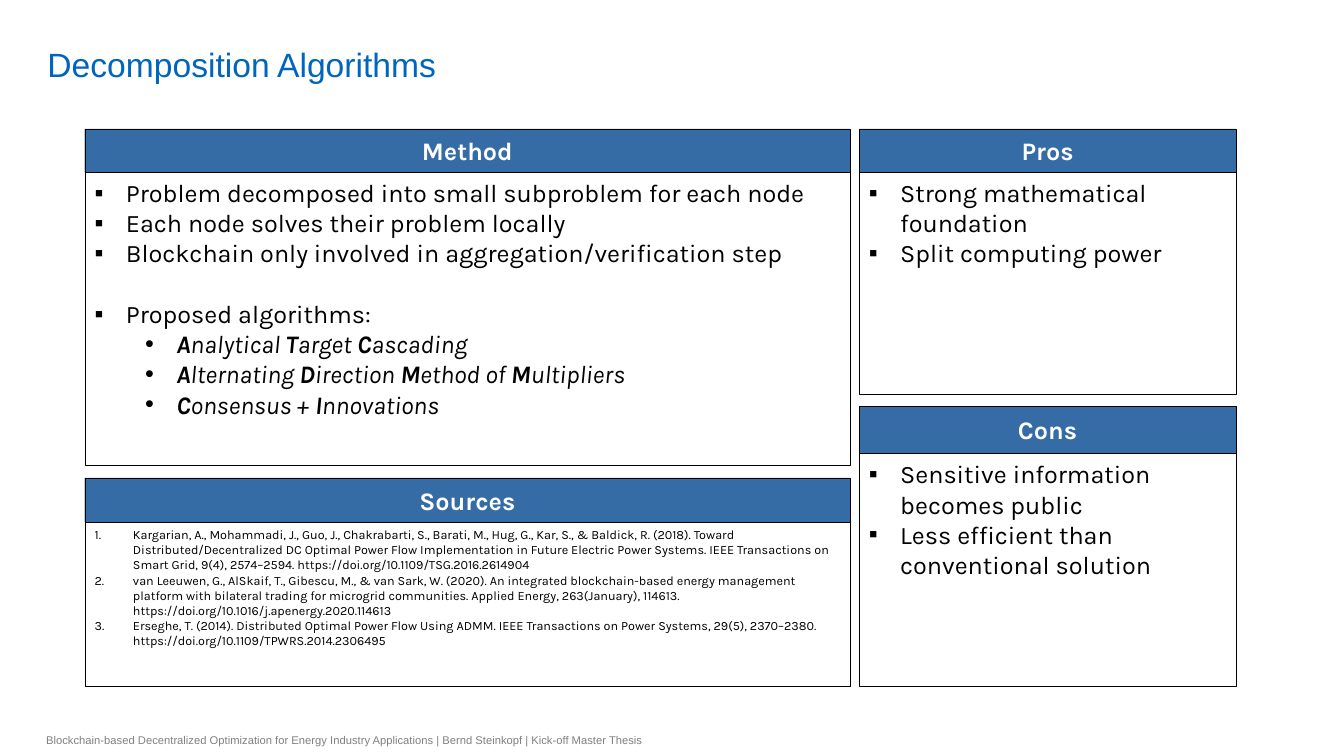
from itertools import groupby

from lxml import etree
from pptx import Presentation
from pptx.dml.color import RGBColor
from pptx.enum.shapes import MSO_SHAPE
from pptx.enum.text import MSO_ANCHOR, MSO_AUTO_SIZE, PP_ALIGN
from pptx.oxml.ns import qn
from pptx.util import Inches, Pt

RECT = MSO_SHAPE.RECTANGLE
TOP, MIDDLE, BOTTOM = MSO_ANCHOR.TOP, MSO_ANCHOR.MIDDLE, MSO_ANCHOR.BOTTOM
LEFT, CENTER = PP_ALIGN.LEFT, PP_ALIGN.CENTER
SQUARE, DOT, NUMBER = "▪", "•", "arabicPeriod"

# Grid in inches: (left, width) of each column, then the panels in it
WIDE, SLIM = (0.84, 7.59), (8.52, 3.74)
HEAD, BODY, SMALL = 18, 18, 9
GAP = 21.6  # one text line, in points

# Panel: column, top, head height, bottom, title, text size, items
# Item: mark, level, text
PANELS = [
    (SLIM, 1.28, 0.43, 3.91, "Pros", BODY, [
        (SQUARE, 0, "Strong mathematical foundation"),
        (SQUARE, 0, "Split computing power"),
    ]),
    (SLIM, 4.03, 0.47, 6.81, "Cons", BODY, [
        (SQUARE, 0, "Sensitive information becomes public"),
        (SQUARE, 0, "Less efficient than conventional solution"),
    ]),
    (WIDE, 4.74, 0.44, 6.81, "Sources", SMALL, [
        (NUMBER, 0, "Kargarian, A., Mohammadi, J., Guo, J., Chakrabarti, S., "
         "Barati, M., Hug, G., Kar, S., & Baldick, R. (2018). Toward "
         "Distributed/Decentralized DC Optimal Power Flow Implementation in "
         "Future Electric Power Systems. IEEE Transactions on Smart Grid, "
         "9(4), 2574–2594. https://doi.org/10.1109/TSG.2016.2614904"),
        (NUMBER, 0, "van Leeuwen, G., AlSkaif, T., Gibescu, M., & van Sark, W. "
         "(2020). An integrated blockchain-based energy management platform "
         "with bilateral trading for microgrid communities. Applied Energy, "
         "263(January), 114613. https://doi.org/10.1016/j.apenergy.2020.114613"),
        (NUMBER, 0, "Erseghe, T. (2014). Distributed Optimal Power Flow Using "
         "ADMM. IEEE Transactions on Power Systems, 29(5), 2370–2380. "
         "https://doi.org/10.1109/TPWRS.2014.2306495"),
    ]),
    (WIDE, 1.28, 0.43, 4.62, "Method", BODY, [
        (SQUARE, 0, "Problem decomposed into small subproblem for each node"),
        (SQUARE, 0, "Each node solves their problem locally"),
        (SQUARE, 0, "Blockchain only involved in aggregation/verification step"),
        (SQUARE, 0, "Proposed algorithms:"),
        (DOT, 1, "Analytical Target Cascading"),
        (DOT, 1, "Alternating Direction Method of Multipliers"),
        (DOT, 1, "Consensus + Innovations"),
    ]),
]


def color(code):
    return RGBColor.from_string(code)


def add_run(para, text, size, code, face="Karla", bold=False, slant=False):
    run = para.add_run()
    run.text = text
    font = run.font
    font.name, font.size, font.bold, font.italic = face, Pt(size), bold, slant
    font.color.rgb = color(code)


deck = Presentation()
deck.slide_width, deck.slide_height = Inches(13.33), Inches(7.5)
slide = deck.slides.add_slide(deck.slide_layouts[5])
shapes = slide.shapes

# Title
title = shapes.title
title.left, title.top = Inches(0.37), Inches(0.05)
title.width, title.height = Inches(11.58), Inches(0.79)
frame = title.text_frame
frame.auto_size = MSO_AUTO_SIZE.NONE
frame.vertical_anchor = BOTTOM
frame.margin_top = frame.margin_bottom = 0
frame.paragraphs[0].alignment = LEFT
add_run(frame.paragraphs[0], "Decomposition Algorithms", 24, "0065BD", "Arial")

# Panels: a head bar over a list box
for (left, width), top, head, bottom, name, size, items in PANELS:
    split = top + head
    frames = []
    for start, end, fill, anchor in [(top, split, "356CA5", MIDDLE),
                                     (split, bottom, "FFFFFF", TOP)]:
        box = shapes.add_shape(RECT, Inches(left), Inches(start),
                               Inches(width), Inches(end - start))
        box.shadow.inherit = False
        box.fill.solid()
        box.fill.fore_color.rgb = color(fill)
        box.line.color.rgb = color("000000")
        box.line.width = Pt(0.25)
        box.text_frame.word_wrap = True
        box.text_frame.vertical_anchor = anchor
        frames.append(box.text_frame)
    bar, body = frames
    bar.paragraphs[0].alignment = CENTER
    add_run(bar.paragraphs[0], name, HEAD, "FFFFFF", bold=True)

    for row, (mark, level, text) in enumerate(items):
        para = body.paragraphs[0] if row == 0 else body.add_paragraph()
        para.alignment = LEFT
        para.level = level
        if text.endswith(":"):
            para.space_before = Pt(GAP)
        hang = 0.38 if mark == NUMBER else 0.31
        props = para._p.get_or_add_pPr()
        props.set("marL", str(Inches(hang + level / 2)))
        props.set("indent", str(-Inches(hang)))
        if mark == NUMBER:
            etree.SubElement(props, qn("a:buFont"), typeface="+mj-lt")
            etree.SubElement(props, qn("a:buAutoNum"), type=mark)
        else:
            etree.SubElement(props, qn("a:buFont"), typeface="Arial")
            etree.SubElement(props, qn("a:buChar"), char=mark)
        if level:  # capitals that form the short name are bold
            for bold, part in groupby(text, str.isupper):
                add_run(para, "".join(part), size, "000000", bold=bold, slant=True)
        else:
            add_run(para, text, size, "000000")

# Footer
foot = shapes.add_textbox(Inches(0.36), Inches(7.18), Inches(6.3), Inches(0.32))
foot.text_frame.word_wrap = True
foot.text_frame.vertical_anchor = MIDDLE
add_run(foot.text_frame.paragraphs[0],
        "Blockchain-based Decentralized Optimization for Energy Industry "
        "Applications | Bernd Steinkopf | Kick-off Master Thesis",
        8, "808080", "Arial")

deck.save("out.pptx")
